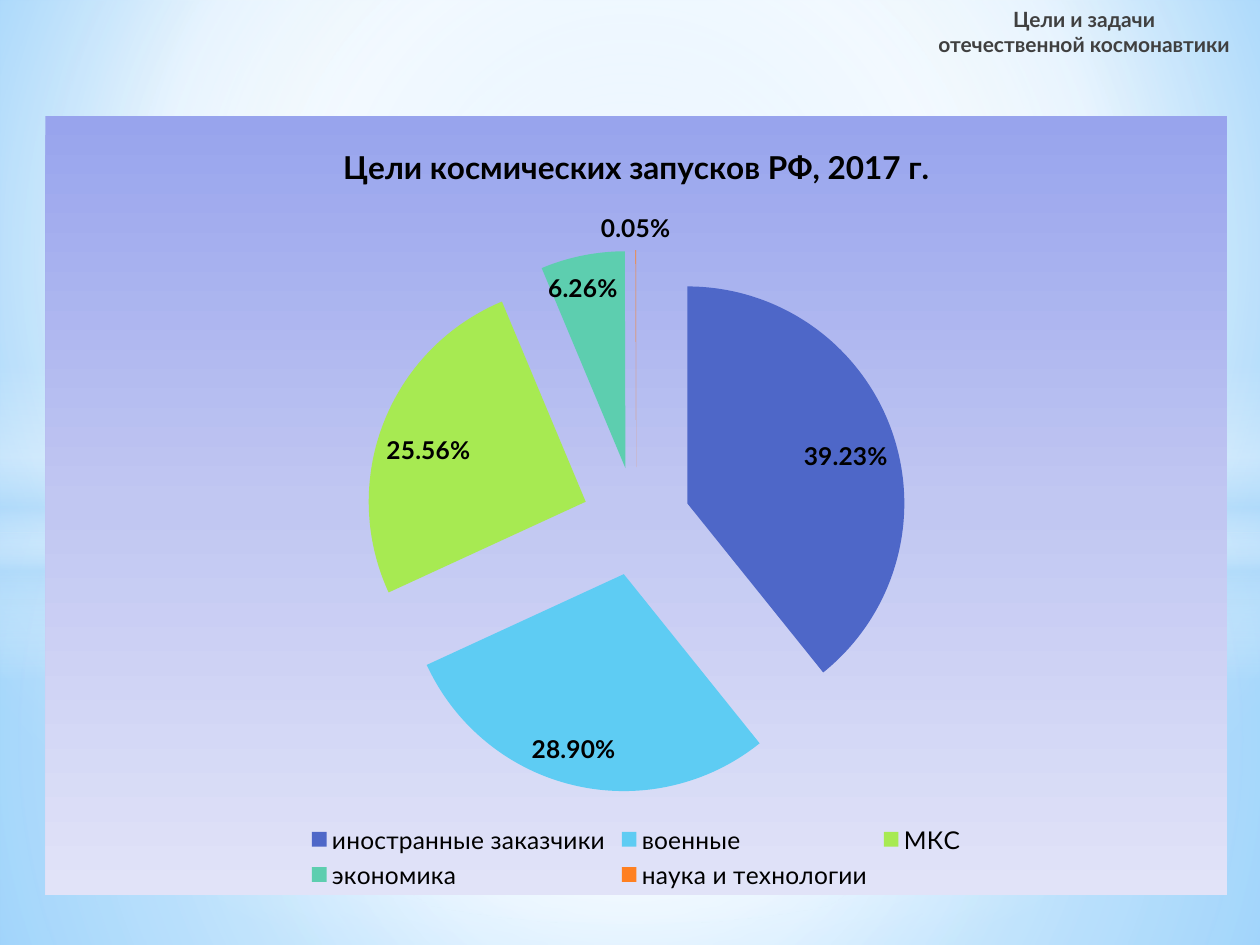
import pptx
import pptx.chart.data
import pptx.dml.color
import pptx.enum.chart
import pptx.enum.shapes
import pptx.enum.text
import pptx.oxml
import pptx.oxml.ns
import pptx.util
from dataclasses import dataclass

qn = pptx.oxml.ns.qn


@dataclass(frozen=True)
class Theme:
    """Colours, gradients, font and type sizes of the slide."""
    font: str = "Lato"
    heading_size: int = 12
    title_size: int = 18
    chart_size: int = 14
    heading_colour: str = "404040"
    chart_colour: str = "000000"
    slices: tuple = ("4E67C8", "5ECCF3", "A7EA52", "5DCEAF", "FF8021")
    sky: tuple = ((0, "9ED5FF", 100), (60, "FFFFFF", 100), (100, "5BB9FF", 100))
    lower_haze: tuple = ((0, "FFFFFF", 91), (37, "FFFFFF", 76), (100, "B4DCFA", 79))
    upper_haze: tuple = ((0, "FFFFFF", 89), (48, "FFFFFF", 62), (100, "B4DCFA", 79))
    horizon: tuple = ((0, "FFFFFF", 0), (29, "FFFFFF", 30), (45, "B4DCFA", 40),
                      (55, "FFFFFF", 26), (65, "B4DCFA", 60), (100, "FFFFFF", 0))
    glow: tuple = ((0, "FFFFFF", 100), (54, "FFFFFF", 0))
    panel: tuple = ((0, "98A4ED", 100), (50, "C1C7F2", 100), (100, "E1E3F8", 100))


THEME = Theme()
WIDTH, HEIGHT = pptx.util.Inches(10), pptx.util.Inches(7.5)
CENTRE = (50, 50, 50, 50)
LAUNCH_SHARES = {
    "иностранные заказчики": 0.3923,
    "военные": 0.289,
    "МКС": 0.2556,
    "экономика": 0.0626,
    "наука и технологии": 0.0005,
}


def area(left, top, width, height):
    """Turn percentages of the slide into a position and size."""
    return [round(share * side / 100) for share, side in
            zip((left, top, width, height), (WIDTH, HEIGHT, WIDTH, HEIGHT))]


def gradient(stops, focus=None):
    """Return a gradient fill, circular around focus or else running downwards."""
    colours = "".join(
        f'<a:gs pos="{place * 1000}"><a:srgbClr val="{colour}">'
        f'<a:alpha val="{opacity * 1000}"/></a:srgbClr></a:gs>'
        for place, colour, opacity in stops)
    if focus:
        sides = " ".join(f'{side}="{share * 1000}"' for side, share in zip("ltrb", focus))
        course = f'<a:path path="circle"><a:fillToRect {sides}/></a:path>'
    else:
        course = '<a:lin ang="5400000" scaled="0"/>'
    return pptx.oxml.parse_xml(
        f'<a:gradFill {pptx.oxml.ns.nsdecls("a")} rotWithShape="1">'
        f'<a:gsLst>{colours}</a:gsLst>{course}</a:gradFill>')


def paint(fill, owner, stops, focus=None):
    """Give the owner of a fill a gradient."""
    fill.solid()
    solid = next(owner.iter(qn("a:solidFill")))
    solid.getparent().replace(solid, gradient(stops, focus))


def add_haze(slide, outline, place, stops, focus=None):
    """Add a translucent, borderless layer of sky."""
    haze = slide.shapes.add_shape(outline, *area(*place))
    haze.shadow.inherit = False
    haze.line.fill.background()
    paint(haze.fill, haze.element.spPr, stops, focus)


def style(font, size, colour, bold):
    """Set the typeface, size, colour and weight of a font."""
    font.name, font.size, font.bold = THEME.font, pptx.util.Pt(size), bold
    font.color.rgb = pptx.dml.color.RGBColor.from_string(colour)


def add_heading(slide, text, place):
    """Add the centred section heading."""
    frame = slide.shapes.add_textbox(*area(*place)).text_frame
    frame.word_wrap = True
    frame.vertical_anchor = pptx.enum.text.MSO_ANCHOR.TOP
    heading = frame.paragraphs[0]
    heading.text = text
    heading.alignment = pptx.enum.text.PP_ALIGN.CENTER
    style(heading.font, THEME.heading_size, THEME.heading_colour, True)


def add_pie(slide, title, shares, place):
    """Add the exploded pie chart on its gradient panel."""
    launches = pptx.chart.data.CategoryChartData(number_format="0.00%")
    launches.categories = shares.keys()
    launches.add_series(title, shares.values())
    chart = slide.shapes.add_chart(
        pptx.enum.chart.XL_CHART_TYPE.PIE, *area(*place), launches).chart
    style(chart.font, THEME.chart_size, THEME.chart_colour, False)

    panel = pptx.oxml.parse_xml(
        f'<c:spPr {pptx.oxml.ns.nsdecls("c", "a")}><a:ln><a:noFill/></a:ln></c:spPr>')
    panel.insert(0, gradient(THEME.panel))
    chart.element.find(qn("c:txPr")).addprevious(panel)

    chart.has_title = True
    caption = chart.chart_title.text_frame.paragraphs[0]
    caption.text = title
    style(caption.font, THEME.title_size, THEME.chart_colour, True)
    chart.chart_title.include_in_layout = False

    chart.has_legend = True
    chart.legend.position = pptx.enum.chart.XL_LEGEND_POSITION.BOTTOM
    chart.legend.include_in_layout = False
    style(chart.legend.font, THEME.chart_size, THEME.chart_colour, False)

    plot = chart.plots[0]
    plot.vary_by_categories = True
    series = plot.series[0]
    for index, colour in enumerate(THEME.slices):
        slice_fill = series.points[index].format.fill
        slice_fill.solid()
        slice_fill.fore_color.rgb = pptx.dml.color.RGBColor.from_string(colour)
    series_name = next(chart.element.iter(qn("c:ser"))).find(qn("c:tx"))
    series_name.addnext(pptx.oxml.parse_xml(
        f'<c:explosion {pptx.oxml.ns.nsdecls("c")} val="25"/>'))

    labels = series.data_labels
    labels.show_value = True
    labels.number_format, labels.number_format_is_linked = "0.00%", False
    labels.position = pptx.enum.chart.XL_LABEL_POSITION.BEST_FIT
    style(labels.font, THEME.chart_size, THEME.chart_colour, True)


def main():
    """Build and save the slide on the goals of space launches."""
    deck = pptx.Presentation()
    deck.slide_width, deck.slide_height = WIDTH, HEIGHT
    slide = deck.slides.add_slide(deck.slide_layouts[6])
    paint(slide.background.fill, slide.element, THEME.sky, (20, 10, 20, 60))

    band = pptx.enum.shapes.MSO_SHAPE.RECTANGLE
    halo = pptx.enum.shapes.MSO_SHAPE.OVAL
    add_haze(slide, band, (0, 56.4, 100, 43.6), THEME.lower_haze, CENTRE)
    add_haze(slide, band, (0, 0, 100, 56.4), THEME.upper_haze, CENTRE)
    add_haze(slide, band, (0, 38.67, 100, 33.33), THEME.horizon)
    add_haze(slide, halo, (0, 23.33, 100, 74.4), THEME.glow, CENTRE)

    add_heading(slide, "Цели и задачи\vотечественной космонавтики", (72.2, 0, 27.7, 7.47))
    add_pie(slide, "Цели космических запусков РФ, 2017 г.", LAUNCH_SHARES,
            (3.6, 12.27, 93.8, 82.4))
    deck.save("out.pptx")


if __name__ == "__main__":
    main()
